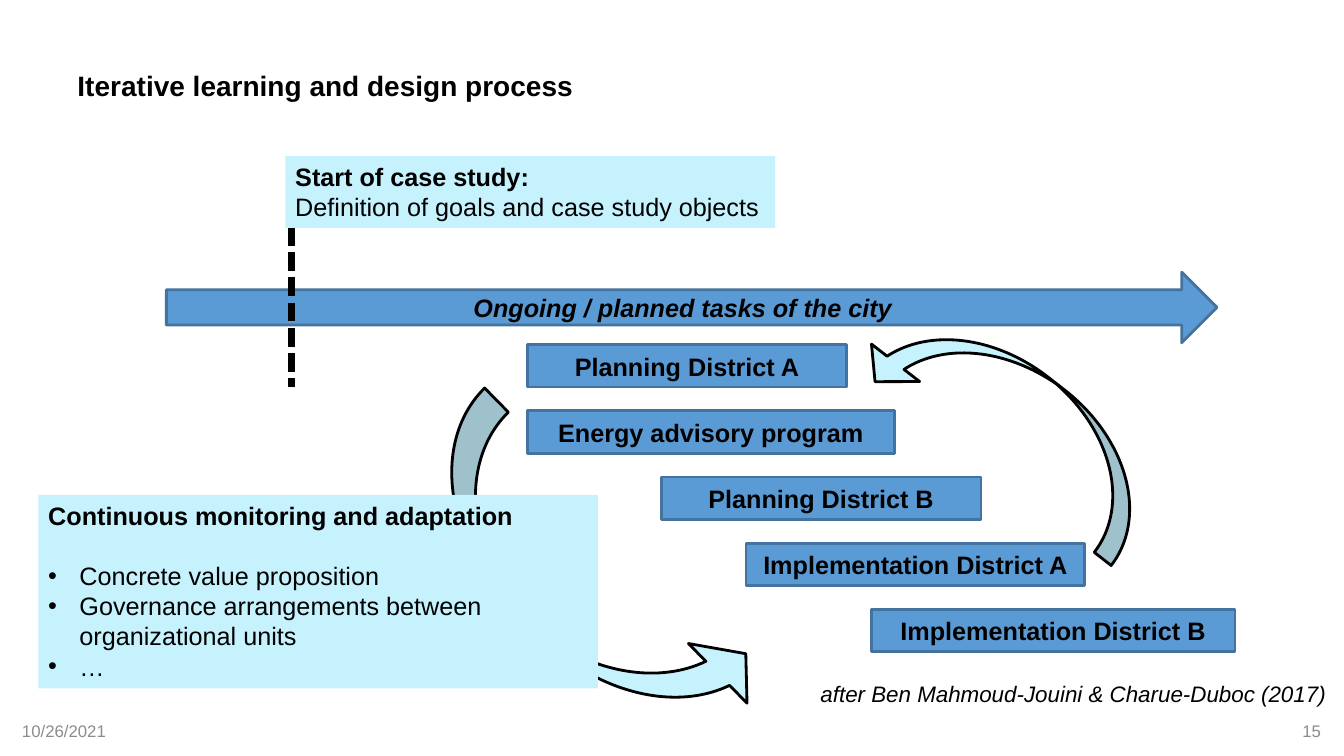
from lxml import etree
from pptx import Presentation
from pptx.dml.color import RGBColor
from pptx.enum.dml import MSO_LINE
from pptx.enum.shapes import MSO_CONNECTOR, MSO_SHAPE as SHAPE
from pptx.enum.text import MSO_ANCHOR as ANCHOR, PP_ALIGN as ALIGN
from pptx.oxml.ns import qn
from pptx.util import Inches, Pt

BLUE, BLUE_EDGE, PALE = "5B9BD5", "43739E", "C6F2FE"
BLACK, GREY = "000000", "8C8C8C"


def rgb(value):
    return RGBColor.from_string(value)


def add_text(p, text, size=18, color=BLACK, bold=False, italic=False):
    r = p.add_run()
    r.text = text
    font = r.font
    font.name, font.size, font.bold, font.italic = "Arial", Pt(size), bold, italic
    font.color.rgb = rgb(color)


def set_bullet(p):
    pPr = p._p.get_or_add_pPr()
    indent = Inches(0.31)
    pPr.set("marL", str(indent))
    pPr.set("indent", str(-indent))
    etree.SubElement(pPr, qn("a:buFont")).set("typeface", "Arial")
    etree.SubElement(pPr, qn("a:buChar")).set("char", "•")


def add_label(slide, box, text, align=ALIGN.LEFT, anchor=ANCHOR.MIDDLE, **style):
    tf = slide.shapes.add_textbox(*map(Inches, box)).text_frame
    tf.word_wrap = True
    tf.vertical_anchor = anchor
    p = tf.paragraphs[0]
    p.alignment = align
    add_text(p, text, **style)


def add_block(slide, kind, box, fill, edge=None):
    sp = slide.shapes.add_shape(kind, *map(Inches, box))
    sp.shadow.inherit = False
    sp.fill.solid()
    sp.fill.fore_color.rgb = rgb(fill)
    if edge:
        sp.line.color.rgb = rgb(edge)
        sp.line.width = Pt(2)
    else:
        sp.line.fill.background()
    return sp


def add_task(slide, kind, box, text, italic=False):
    tf = add_block(slide, kind, box, BLUE, BLUE_EDGE).text_frame
    tf.word_wrap = True
    tf.vertical_anchor = ANCHOR.MIDDLE
    p = tf.paragraphs[0]
    p.alignment = ALIGN.CENTER
    add_text(p, text, bold=True, italic=italic)


def add_task_steps(slide, left, top):
    steps = [
        (0, 3.17, "Planning District A"),
        (0, 3.64, "Energy advisory program"),
        (1.33, 3.17, "Planning District B"),
        (2.17, 3.36, "Implementation District A"),
        (3.41, 3.61, "Implementation District B"),
    ]
    for row, (offset, width, text) in enumerate(steps):
        box = (left + offset, top + row * 0.656, width, 0.42)
        add_task(slide, SHAPE.RECTANGLE, box, text)


def add_loop_arrow(slide, box, rotation, adjustments):
    sp = add_block(slide, SHAPE.CURVED_RIGHT_ARROW, box, PALE, BLACK)
    sp.rotation = rotation
    for i, value in enumerate(adjustments):
        sp.adjustments[i] = value


def add_note(slide, box, heading, lines, bulleted=False):
    tf = add_block(slide, SHAPE.RECTANGLE, box, PALE).text_frame
    tf.word_wrap = True
    tf.vertical_anchor = ANCHOR.TOP
    p = tf.paragraphs[0]
    p.alignment = ALIGN.LEFT
    add_text(p, heading, bold=True)
    if bulleted:
        p.space_after = Pt(21.5)
    for line in lines:
        p = tf.add_paragraph()
        p.alignment = ALIGN.LEFT
        if bulleted:
            set_bullet(p)
        add_text(p, line)


def add_start_marker(slide, x, top, bottom):
    ends = map(Inches, (x, top, x, bottom))
    line = slide.shapes.add_connector(MSO_CONNECTOR.STRAIGHT, *ends)
    line.line.color.rgb = rgb(BLACK)
    line.line.width = Pt(4.5)
    line.line.dash_style = MSO_LINE.SQUARE_DOT
    etree.SubElement(line._element.spPr, qn("a:effectLst"))


def add_footer(slide, top):
    add_label(slide, (0.12, top, 3, 0.4), "10/26/2021", size=12, color=GREY)
    add_label(slide, (10.2, top, 3, 0.4), "15", ALIGN.RIGHT, size=12, color=GREY)


def build_process_slide(prs):
    slide = prs.slides.add_slide(prs.slide_layouts[6])
    add_loop_arrow(slide, (5.1, 3.73, 1.34, 4.11), 315.5, (0.25, 0.619, 0.25))
    add_label(slide, (0.67, 0.22, 10.25, 1.25),
              "Iterative learning and design process", size=20, bold=True)
    add_footer(slide, 7.05)
    add_task(slide, SHAPE.RIGHT_ARROW, (1.65, 2.7, 10.42, 0.7),
             "Ongoing / planned tasks of the city", italic=True)
    add_label(slide, (7.4, 6.7, 6.49, 0.37),
              "after Ben Mahmoud-Jouini & Charue-Duboc (2017)",
              ALIGN.CENTER, ANCHOR.TOP, size=16, italic=True)
    add_task_steps(slide, 5.23, 3.42)
    add_note(slide, (0.38, 4.91, 5.55, 1.92), "Continuous monitoring and adaptation",
             ["Concrete value proposition",
              "Governance arrangements between organizational units", "…"],
             bulleted=True)
    add_loop_arrow(slide, (9.52, 2.54, 1.09, 3.27), 127.9, (0.195, 0.555, 0.25))
    add_start_marker(slide, 2.89, 2, 3.84)
    add_note(slide, (2.83, 1.55, 4.86, 0.71), "Start of case study:",
             ["Definition of goals and case study objects"])


def main():
    prs = Presentation()
    prs.slide_width, prs.slide_height = Inches(13.33), Inches(7.5)
    build_process_slide(prs)
    prs.save("out.pptx")


if __name__ == "__main__":
    main()
